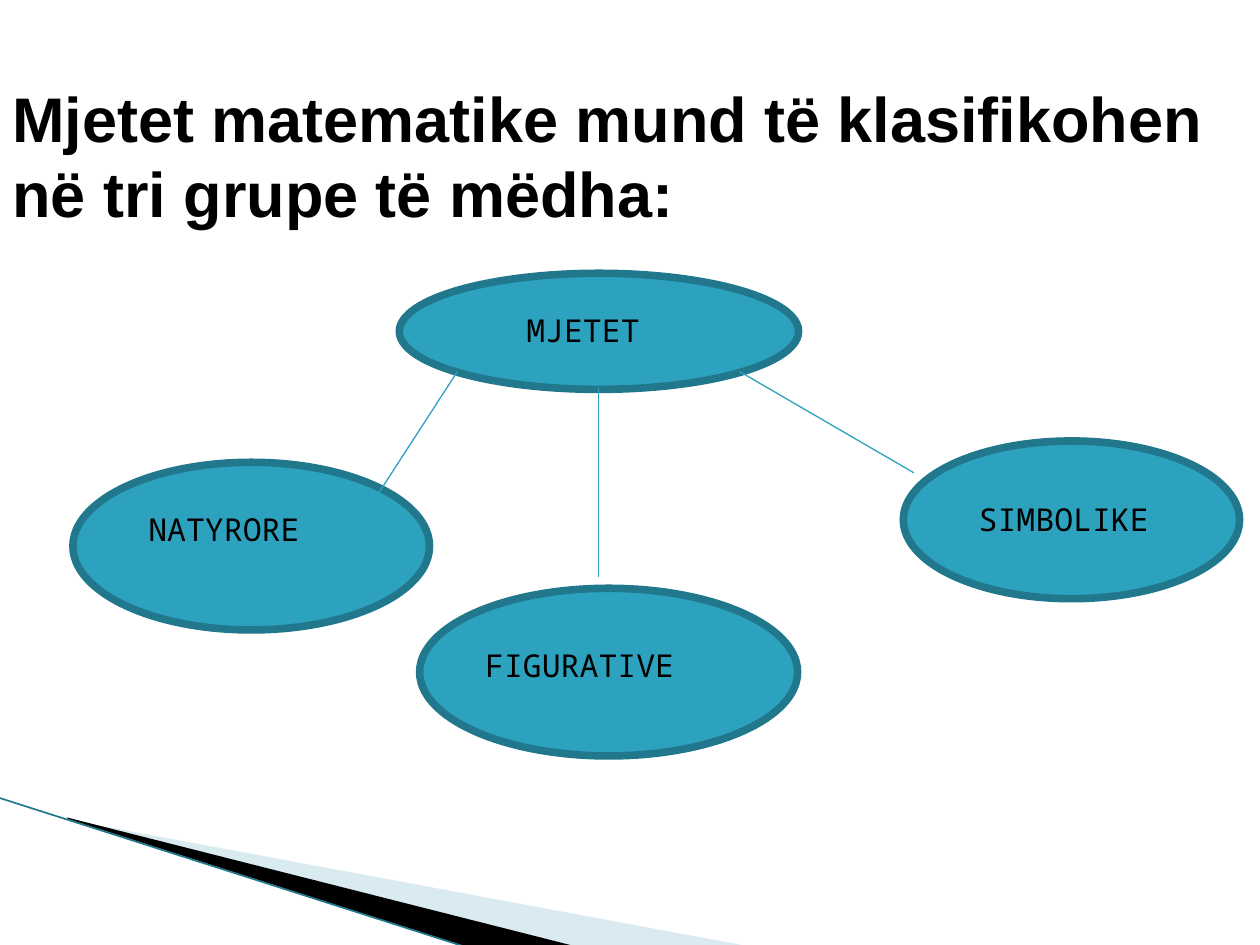
from typing import NamedTuple

from pptx import Presentation
from pptx.dml.color import RGBColor
from pptx.enum.shapes import MSO_CONNECTOR as Connector, MSO_SHAPE as Preset
from pptx.oxml.ns import qn
from pptx.util import Cm, Pt
from lxml.etree import SubElement

COLORS = {
    "node": "2DA2BF",
    "outline": "21788D",
    "text": "000000",
    "dark_wedge": "000000",
    "light_wedge": "A0CBDC",
}

Point = tuple[float, float]
Box = tuple[float, float, float, float]


class Node(NamedTuple):
    text: str
    ellipse: Box
    label: Box


class Link(NamedTuple):
    start: Point
    end: Point


# Lengths in centimetres
NODES = [
    Node("MJETET", (8.05, 5.51, 8.05, 2.34), (10.36, 6.15, 3.38, 1.07)),
    Node("NATYRORE", (1.47, 9.32, 7.19, 3.38), (2.74, 10.16, 4.65, 1.02)),
    Node("FIGURATIVE", (8.46, 11.86, 7.62, 3.38), (9.53, 12.9, 5.28, 1.02)),
    Node("SIMBOLIKE", (18.21, 8.89, 6.78, 3.18), (19.48, 9.96, 4.65, 1.02)),
]
LINKS = [
    Link((9.22, 7.49), (7.62, 9.96)),
    Link((12.07, 7.82), (12.07, 11.63)),
    Link((14.91, 7.49), (18.42, 9.53)),
]
LIGHT_WEDGE = [(1.4, 16.53), (15.11, 19.08), (11.58, 19.08), (1.4, 16.51)]
DARK_WEDGE = [(1.35, 16.48), (11.61, 19.08), (9.45, 19.1), (1.37, 16.51)]
EDGE = Link((-0.03, 16.08), (9.42, 19.1))


def color(name: str) -> RGBColor:
    return RGBColor.from_string(COLORS[name])


def lengths(values: tuple) -> list[Cm]:
    return [Cm(value) for value in values]


def add_wedge(slide, points: list[Point], fill: str, opacity: int = 100) -> None:
    corners = [lengths(point) for point in points]
    builder = slide.shapes.build_freeform(*corners[0])
    builder.add_line_segments(corners[1:], close=True)
    shape = builder.convert_to_shape()
    shape.shadow.inherit = False
    shape.fill.solid()
    shape.fill.fore_color.rgb = color(fill)
    shape.line.fill.background()
    if opacity < 100:
        solid = shape.fill._xPr.find(qn("a:solidFill"))
        SubElement(solid[0], qn("a:alpha"), val=str(opacity * 1000))


def add_link(slide, link: Link, line: str, width: float) -> None:
    connector = slide.shapes.add_connector(
        Connector.STRAIGHT, *lengths(link.start + link.end))
    connector.line.color.rgb = color(line)
    connector.line.width = Pt(width)
    SubElement(connector._element.spPr, qn("a:effectLst"))


def add_ellipse(slide, box: Box) -> None:
    shape = slide.shapes.add_shape(Preset.OVAL, *lengths(box))
    shape.shadow.inherit = False
    shape.fill.solid()
    shape.fill.fore_color.rgb = color("node")
    shape.line.color.rgb = color("outline")
    shape.line.width = Pt(4.33)


def add_text(slide, text: str, box: Box, font: str, size: int,
             bold: bool = False) -> None:
    frame = slide.shapes.add_textbox(*lengths(box)).text_frame
    frame.word_wrap = True
    paragraph = frame.paragraphs[0]
    paragraph.text = text
    paragraph.font.name = font
    paragraph.font.size = Pt(size)
    paragraph.font.bold = bold
    paragraph.font.color.rgb = color("text")


def main() -> None:
    presentation = Presentation()
    presentation.slide_width, presentation.slide_height = Cm(25.4), Cm(19.05)
    slide = presentation.slides.add_slide(presentation.slide_layouts[6])

    # Corner decoration
    add_wedge(slide, LIGHT_WEDGE, "light_wedge", opacity=40)
    add_wedge(slide, DARK_WEDGE, "dark_wedge")
    add_link(slide, EDGE, "outline", 0.95)

    # Heading
    add_text(slide, "Mjetet matematike mund të klasifikohen në tri grupe të mëdha:",
             (0, 1.47, 25.4, 11.02), "Arial", 36, bold=True)

    # Diagram: ellipses with labels, then the links on top
    for node in NODES:
        add_ellipse(slide, node.ellipse)
        add_text(slide, node.text, node.label, "Noto Sans Mono", 18)
    for link in LINKS:
        add_link(slide, link, "node", 0.75)

    presentation.save("out.pptx")


if __name__ == "__main__":
    main()
